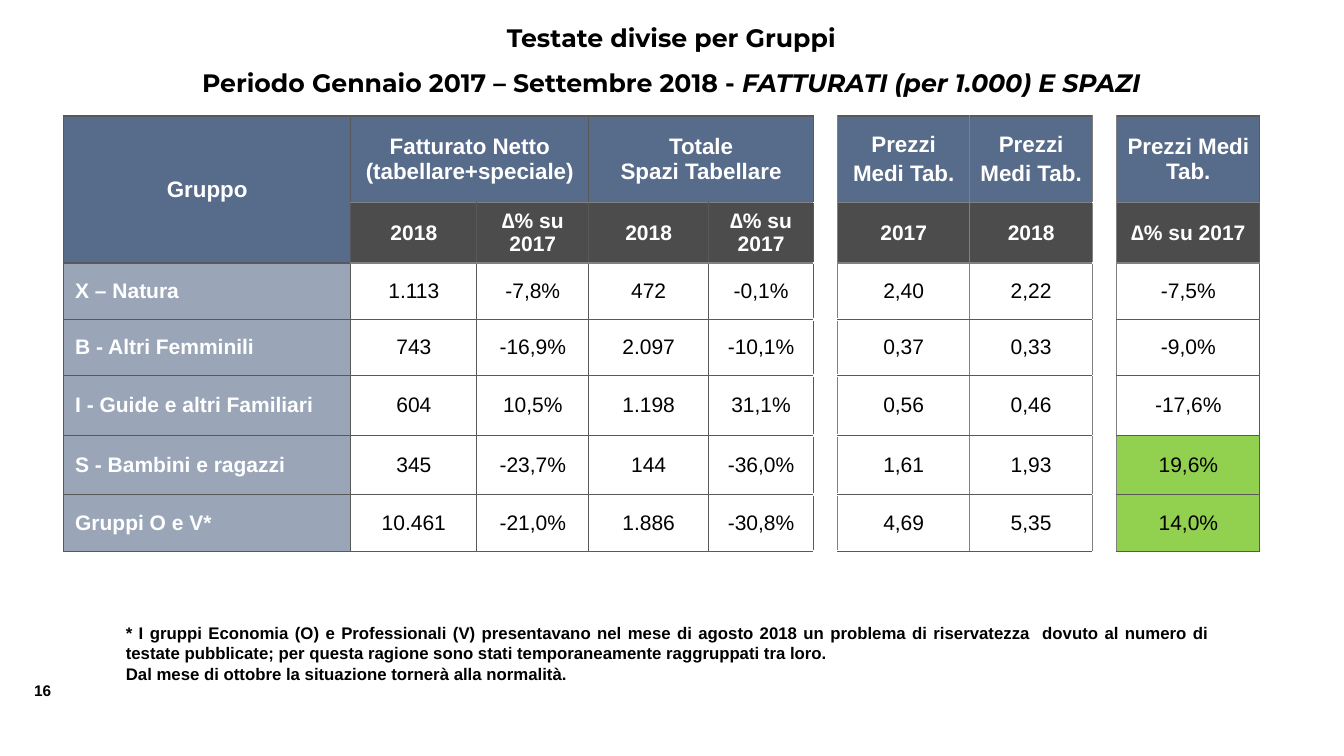
from dataclasses import dataclass

from lxml import etree
from pptx import Presentation
from pptx.dml.color import RGBColor
from pptx.enum.text import MSO_ANCHOR, PP_ALIGN
from pptx.oxml.ns import qn
from pptx.util import Pt

LEFT, CENTER, JUSTIFY = PP_ALIGN.LEFT, PP_ALIGN.CENTER, PP_ALIGN.JUSTIFY
TOP, MIDDLE = MSO_ANCHOR.TOP, MSO_ANCHOR.MIDDLE


@dataclass(frozen=True)
class Theme:
    body_font: str = "Arial"
    title_font: str = "Montserrat"
    black: str = "000000"
    white: str = "FFFFFF"
    blue: str = "576B8A"
    green: str = "92D050"
    dark_line: str = "595959"
    light_line: str = "808080"
    title_size: float = 18
    header_size: float = 16
    table_size: float = 15
    note_size: float = 12
    number_size: float = 11


@dataclass(frozen=True)
class TextStyle:
    size: float
    color: str
    bold: bool = True
    font: str = "Arial"
    align: PP_ALIGN = CENTER
    line_spacing: float = 1.0
    space_between: float = 0


@dataclass(frozen=True)
class CellStyle:
    text: TextStyle
    fill: str
    opacity: int = 100
    side_margin: float = 0
    edge_margin: float = 0


@dataclass(frozen=True)
class TextBox:
    left: float
    top: float
    width: float
    height: float
    lines: tuple
    style: TextStyle
    wrap: bool = True


THEME = Theme()

# Table geometry and content
TABLE_LEFT, TABLE_TOP = 45.4, 82.8
COLUMN_WIDTHS = (205.2, 90, 79.9, 85.7, 74.9, 17.3, 94.3, 87.8, 17.3, 102.2)
ROW_HEIGHTS = (61.9, 43.2, 40.3, 40.3, 42.5, 42.5, 40.3)
GAP_COLUMNS = (5, 8)
HEADER_ROWS = 2
PRICE_COLUMN = 6
CHANGE = "∆% su 2017"
AVERAGE_PRICE = "Prezzi\nMedi Tab."
TABLE_ROWS = (
    ("Gruppo", "Fatturato Netto (tabellare+speciale)", "", "Totale\nSpazi Tabellare", "",
     "", AVERAGE_PRICE, AVERAGE_PRICE, "", "Prezzi Medi Tab."),
    ("", "2018", CHANGE, "2018", CHANGE, "", "2017", "2018", "", CHANGE),
    ("X – Natura", "1.113", "-7,8%", "472", "-0,1%", "", "2,40", "2,22", "", "-7,5%"),
    ("B - Altri Femminili", "743", "-16,9%", "2.097", "-10,1%", "", "0,37", "0,33", "", "-9,0%"),
    ("I - Guide e altri Familiari", "604", "10,5%", "1.198", "31,1%", "", "0,56", "0,46", "",
     "-17,6%"),
    ("S - Bambini e ragazzi", "345", "-23,7%", "144", "-36,0%", "", "1,61", "1,93", "", "19,6%"),
    ("Gruppi O e V*", "10.461", "-21,0%", "1.886", "-30,8%", "", "4,69", "5,35", "", "14,0%"),
)
MERGES = (((0, 0), (1, 0)), ((0, 1), (0, 2)), ((0, 3), (0, 4)))

# Cell styles
HEADER_TEXT = TextStyle(THEME.header_size, THEME.white)
PRICE_TEXT = TextStyle(THEME.header_size, THEME.white, space_between=3)
YEAR_TEXT = TextStyle(THEME.table_size, THEME.white)
LABEL_TEXT = TextStyle(THEME.table_size, THEME.white, align=LEFT)
VALUE_TEXT = TextStyle(THEME.table_size, THEME.black, bold=False)
HEADER = CellStyle(HEADER_TEXT, THEME.blue, side_margin=7.2, edge_margin=3.6)
PRICE_HEADER = CellStyle(PRICE_TEXT, THEME.blue, side_margin=7.2, edge_margin=3.6)
YEAR = CellStyle(YEAR_TEXT, THEME.black, opacity=70, side_margin=7.2, edge_margin=3.6)
LABEL = CellStyle(LABEL_TEXT, THEME.blue, opacity=60, side_margin=8.3)
VALUE = CellStyle(VALUE_TEXT, THEME.white)
GROWTH = CellStyle(VALUE_TEXT, THEME.green)

# Text around the table
TITLE = TextBox(
    79.9, 1.4, 799.2, 77,
    ("Testate divise per Gruppi", "Periodo Gennaio 2017 – Settembre 2018 - "),
    TextStyle(THEME.title_size, THEME.black, font=THEME.title_font, line_spacing=1.5))
TITLE_EMPHASIS = "FATTURATI (per 1.000) E SPAZI"
NOTE = TextBox(
    82.8, 441.4, 788.4, 51.1,
    ("* I gruppi Economia (O) e Professionali (V) presentavano nel mese di agosto 2018 un "
     "problema di riservatezza  dovuto al numero di testate pubblicate; per questa ragione "
     "sono stati temporaneamente raggruppati tra loro.",
     "Dal mese di ottobre la situazione tornerà alla normalità."),
    TextStyle(THEME.note_size, THEME.black, align=JUSTIFY))
PAGE_NUMBER = TextBox(
    17.3, 483.1, 30.2, 20.9, ("16",),
    TextStyle(THEME.number_size, THEME.black, align=LEFT), wrap=False)


def write_lines(frame, lines, style: TextStyle) -> None:
    for index, line in enumerate(lines):
        para = frame.paragraphs[0] if index == 0 else frame.add_paragraph()
        para.text = line
        para.alignment = style.align
        para.line_spacing = style.line_spacing
        if index and style.space_between:
            para.space_before = Pt(style.space_between)
        para.font.name = style.font
        para.font.size = Pt(style.size)
        para.font.bold = style.bold
        para.font.color.rgb = RGBColor.from_string(style.color)


def draw_text(page, spec_box: TextBox):
    box = page.shapes.add_textbox(
        Pt(spec_box.left), Pt(spec_box.top), Pt(spec_box.width), Pt(spec_box.height))
    box.text_frame.word_wrap = spec_box.wrap
    box.text_frame.vertical_anchor = TOP
    write_lines(box.text_frame, spec_box.lines, spec_box.style)
    return box.text_frame


def cell_style(row: int, column: int, text: str) -> CellStyle:
    if column in GAP_COLUMNS:
        return VALUE
    if row == 0:
        return PRICE_HEADER if column >= PRICE_COLUMN else HEADER
    if row < HEADER_ROWS:
        return YEAR
    if column == 0:
        return LABEL
    is_growth = column == len(COLUMN_WIDTHS) - 1 and not text.startswith("-")
    return GROWTH if is_growth else VALUE


def column_line(edge: int) -> tuple[str, float]:
    inner = PRICE_COLUMN <= edge < len(COLUMN_WIDTHS)
    return (THEME.light_line if inner else THEME.dark_line), 1


def row_line(edge: int, column: int) -> tuple[str, float]:
    if column in GAP_COLUMNS:
        wide = column == GAP_COLUMNS[0] and edge > HEADER_ROWS
        return THEME.white, 2.25 if wide else 1
    under_header = 1 <= edge <= HEADER_ROWS and column > 0
    return (THEME.light_line if under_header else THEME.dark_line), 1


def add_border(cell, tag: str, color: str, width: float) -> None:
    line = etree.SubElement(cell._tc.get_or_add_tcPr(), qn(tag), w=str(Pt(width)))
    fill = etree.SubElement(line, qn("a:solidFill"))
    etree.SubElement(fill, qn("a:srgbClr"), val=color)


def format_cell(cell, row: int, column: int, text: str) -> None:
    style = cell_style(row, column, text)
    # Borders come before the fill in the cell properties
    add_border(cell, "a:lnL", *column_line(column))
    add_border(cell, "a:lnR", *column_line(column + 1))
    add_border(cell, "a:lnT", *row_line(row, column))
    add_border(cell, "a:lnB", *row_line(row + 1, column))
    cell.fill.solid()
    cell.fill.fore_color.rgb = RGBColor.from_string(style.fill)
    if style.opacity < 100:
        color = cell._tc.tcPr.find(qn("a:solidFill")).find(qn("a:srgbClr"))
        etree.SubElement(color, qn("a:alpha"), val=str(style.opacity * 1000))
    cell.margin_left = cell.margin_right = Pt(style.side_margin)
    cell.margin_top = cell.margin_bottom = Pt(style.edge_margin)
    cell.vertical_anchor = MIDDLE
    write_lines(cell.text_frame, text.split("\n"), style.text)


def draw_table(page) -> None:
    table = page.shapes.add_table(
        len(ROW_HEIGHTS), len(COLUMN_WIDTHS), Pt(TABLE_LEFT), Pt(TABLE_TOP),
        Pt(sum(COLUMN_WIDTHS)), Pt(sum(ROW_HEIGHTS))).table
    table.first_row = table.horz_banding = False
    for column, width in zip(table.columns, COLUMN_WIDTHS):
        column.width = Pt(width)
    for row, height in zip(table.rows, ROW_HEIGHTS):
        row.height = Pt(height)
    for start, end in MERGES:
        table.cell(*start).merge(table.cell(*end))
    for row, texts in enumerate(TABLE_ROWS):
        for column, text in enumerate(texts):
            format_cell(table.cell(row, column), row, column, text)


def main() -> None:
    deck = Presentation()
    deck.slide_width, deck.slide_height = Pt(960), Pt(540)
    page = deck.slides.add_slide(deck.slide_layouts[6])
    draw_text(page, PAGE_NUMBER)
    title = draw_text(page, TITLE)
    span = title.paragraphs[-1].add_run()
    span.text = TITLE_EMPHASIS
    span.font.italic = True
    draw_table(page)
    draw_text(page, NOTE)
    deck.save("out.pptx")


if __name__ == "__main__":
    main()
